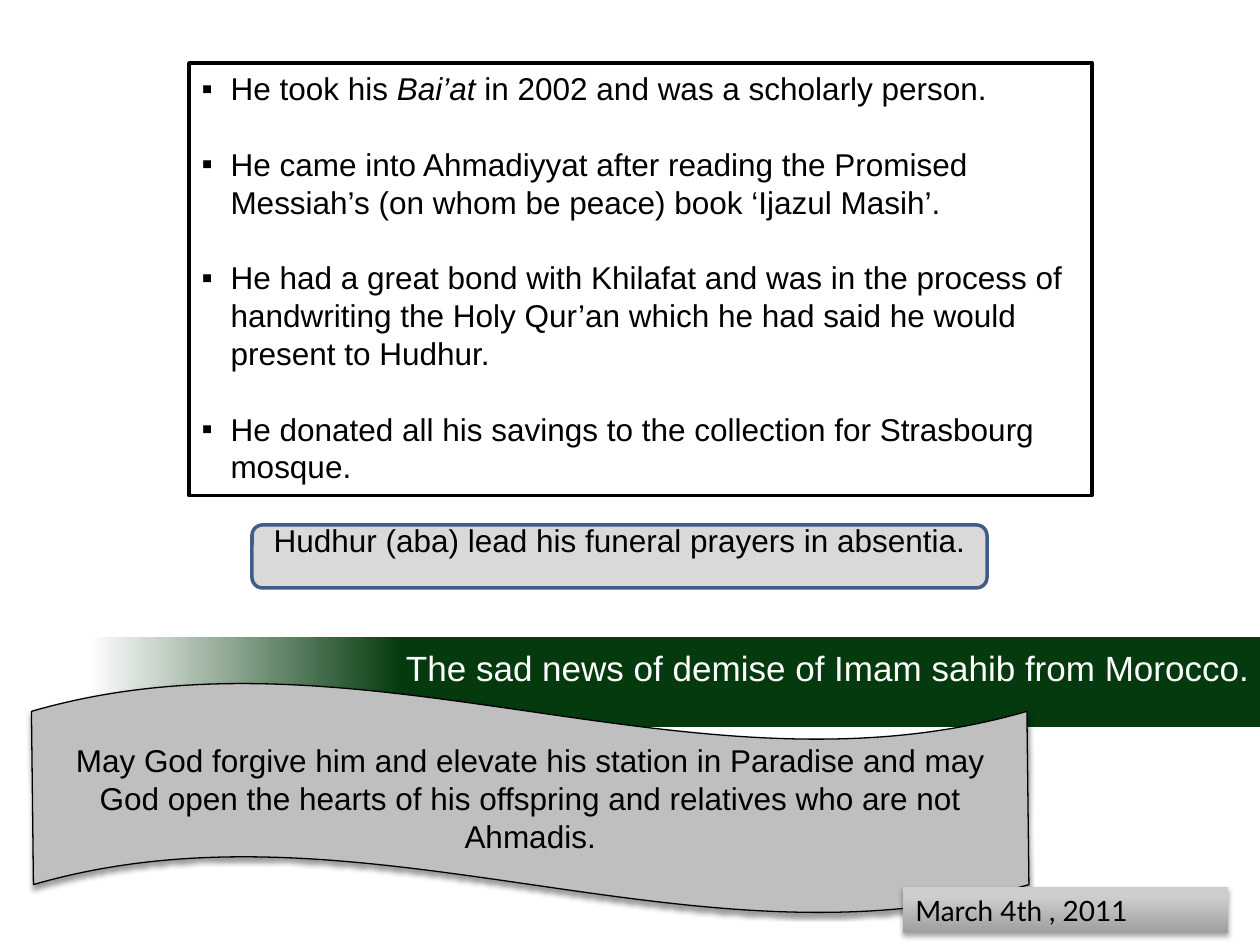
import pptx
import pptx.util
import pptx.dml.color
import pptx.enum.shapes
import pptx.enum.text
import pptx.oxml.ns
import lxml.etree

RGB = pptx.dml.color.RGBColor
SHAPE = pptx.enum.shapes.MSO_SHAPE
ALIGN = pptx.enum.text.PP_ALIGN
ANCHOR = pptx.enum.text.MSO_ANCHOR
Pt, Inches, qn = pptx.util.Pt, pptx.util.Inches, pptx.oxml.ns.qn

BLACK = RGB(0x00, 0x00, 0x00)
WHITE = RGB(0xFF, 0xFF, 0xFF)
GREEN = RGB(0x04, 0x3A, 0x0D)
SILVER = RGB(0xBF, 0xBF, 0xBF)
PALE = RGB(0xD9, 0xD9, 0xD9)
BLUE = RGB(0x3F, 0x5D, 0x89)
DARK_GREY = RGB(0x9E, 0x9E, 0x9E)
LIGHT_GREY = RGB(0xCD, 0xCD, 0xCD)

TITLE = "The sad news of demise of Imam sahib from Morocco."
FACTS = [
    [("He took his ", False), ("Bai’at", True), (" in 2002 and was a scholarly person.", False)],
    "He came into Ahmadiyyat after reading the Promised Messiah’s (on whom be peace) book ‘Ijazul Masih’.",
    "He had a great bond with Khilafat and was in the process of handwriting the Holy Qur’an "
    "which he had said he would present to Hudhur.",
    "He donated all his savings to the collection for Strasbourg mosque.",
]
FUNERAL = "Hudhur (aba) lead his funeral prayers in absentia."
PRAYER = ("May God forgive him and elevate his station in Paradise and may God open the hearts "
          "of his offspring and relatives who are not Ahmadis.")
DATE = "March 4th , 2011"

COLUMNS, ROWS = 120, 90
AREAS = {
    "band": (0, 60.7, 120, 8.5),
    "title": (19, 61, 101, 7.4),
    "facts": (18, 6, 86, 41.2),
    "prayer": (3, 65, 95, 22),
    "funeral": (24, 50, 70, 6),
    "date": (86, 84.5, 31, 4.4),
}

prs = pptx.Presentation()
prs.slide_width, prs.slide_height = Inches(10), Inches(7.5)
s = prs.slides.add_slide(prs.slide_layouts[1])


def area(name):
    col, row, width, height = AREAS[name]
    x, y = prs.slide_width / COLUMNS, prs.slide_height / ROWS
    return int(col * x), int(row * y), int(width * x), int(height * y)


def place(sp, name):
    sp.left, sp.top, sp.width, sp.height = area(name)
    return sp


def paint(sp, fill, line=None, width=0, angle=0):
    if isinstance(fill, list):
        sp.fill.gradient()
        sp.fill.gradient_angle = angle
        for stop, (position, color) in zip(sp.fill.gradient_stops, fill):
            stop.position, stop.color.rgb = position, color
    else:
        sp.fill.solid()
        sp.fill.fore_color.rgb = fill
    if line is None:
        sp.line.fill.background()
    else:
        sp.line.color.rgb, sp.line.width = line, Pt(width)


def add(kind, name, fill, **style):
    sp = s.shapes.add_shape(kind, *area(name))
    sp.shadow.inherit = False
    paint(sp, fill, **style)
    return sp


def cast_shadow(sp, alpha, blur, distance):
    effects = sp._element.spPr.find(qn("a:effectLst"))
    shadow = lxml.etree.SubElement(effects, qn("a:outerShdw"), blurRad=str(Pt(blur)),
                                   dist=str(Pt(distance)), dir="5400000", rotWithShape="0")
    color = lxml.etree.SubElement(shadow, qn("a:srgbClr"), val="000000")
    lxml.etree.SubElement(color, qn("a:alpha"), val=str(alpha * 1000))


def write(sp, paragraphs, size=18, font="Arial", color=BLACK, align=ALIGN.LEFT,
          anchor=ANCHOR.TOP, before=0, gap=0, bullet=None):
    tf = sp.text_frame
    tf.word_wrap, tf.vertical_anchor = True, anchor
    tf.auto_size = pptx.enum.text.MSO_AUTO_SIZE.NONE
    for i, content in enumerate(paragraphs):
        p = tf.paragraphs[0] if i == 0 else tf.add_paragraph()
        p.alignment = align
        p.space_before = Pt(gap if i else before)
        if bullet:
            pPr = p._p.get_or_add_pPr()
            pPr.set("marL", str(Inches(0.23)))
            pPr.set("indent", str(-Inches(0.23)))
            lxml.etree.SubElement(pPr, qn("a:buChar"), char=bullet)
        for text, italic in [(content, False)] if isinstance(content, str) else content:
            r = p.add_run()
            r.text = text
            r.font.size, r.font.name, r.font.italic = Pt(size), font, italic
            r.font.color.rgb = color


band = add(SHAPE.RECTANGLE, "band", [(0.07, WHITE), (0.32, GREEN)])
s.shapes._spTree.insert(2, band._element)

title = place(s.shapes.title, "title")
title.text_frame.margin_left, title.text_frame.margin_right = 0, Inches(0.08)
write(title, [TITLE], size=20, color=WHITE, align=ALIGN.RIGHT, before=10.8)

facts = place(s.placeholders[1], "facts")
paint(facts, WHITE, line=BLACK, width=2)
write(facts, FACTS, gap=21.6, bullet="▪")

prayer = add(SHAPE.WAVE, "prayer", SILVER, line=BLACK, width=0.75)
prayer.adjustments[0], prayer.adjustments[1] = 0.125, 0.001
cast_shadow(prayer, 38, 3.1, 1.6)
write(prayer, [PRAYER], align=ALIGN.CENTER, anchor=ANCHOR.MIDDLE)

funeral = add(SHAPE.ROUNDED_RECTANGLE, "funeral", PALE, line=BLUE, width=2)
funeral.text_frame.margin_top, funeral.text_frame.margin_bottom = 0, Inches(0.27)
write(funeral, [FUNERAL], align=ALIGN.CENTER, anchor=ANCHOR.MIDDLE)

date = add(SHAPE.RECTANGLE, "date", [(0, DARK_GREY), (0.8, LIGHT_GREY)], angle=90)
cast_shadow(date, 35, 3.1, 1.8)
write(date, [DATE], size=16, font="Lato")

prs.save("out.pptx")
